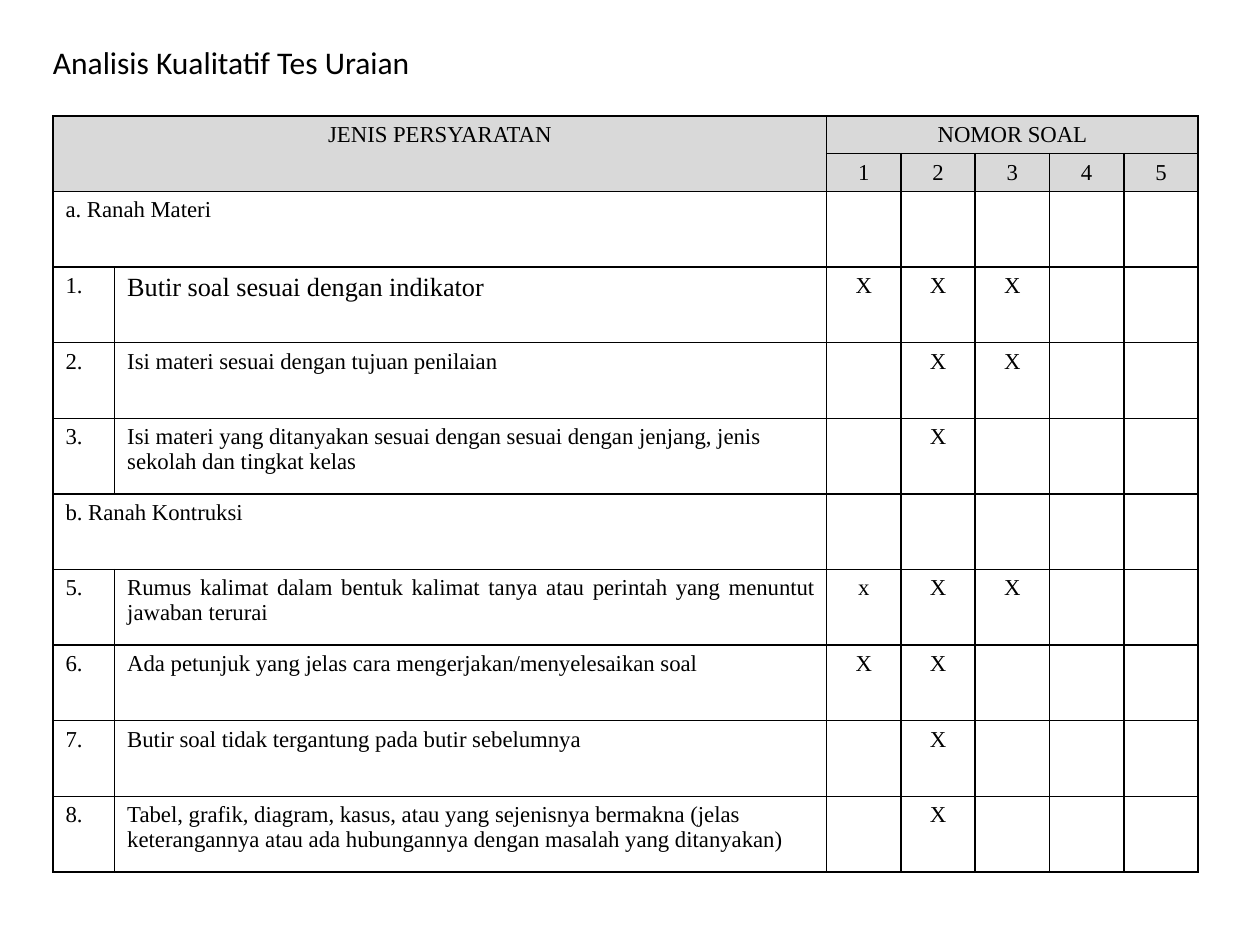
from lxml.etree import SubElement
from pptx import Presentation
from pptx.dml.color import RGBColor
from pptx.enum.text import MSO_ANCHOR, MSO_AUTO_SIZE, PP_ALIGN
from pptx.oxml.ns import qn
from pptx.util import Inches, Pt

COLORS = {"text": "000000", "border": "000000", "header": "D9D9D9"}
TITLE_FORMAT = {"name": "Calibri", "size": Pt(18), "bold": False}
CELL_FORMAT = {"name": "Times New Roman", "size": Pt(13), "bold": False}
LARGE_FORMAT = {**CELL_FORMAT, "size": Pt(15)}
CELL_MARGINS = {"margin_left": Inches(0.1), "margin_right": Inches(0.1),
                "margin_top": Inches(0.05), "margin_bottom": Inches(0.02)}

QUESTIONS = ["1", "2", "3", "4", "5"]
COLUMN_WIDTHS = [0.49, 5.65] + [0.59] * len(QUESTIONS)
HEADER_ROWS = 2
HEADER_HEIGHT, BODY_HEIGHT = 0.3, 0.6
LEFT, JUSTIFY, CENTER = PP_ALIGN.LEFT, PP_ALIGN.JUSTIFY, PP_ALIGN.CENTER

# Number (None for a section row), requirement, alignment, marks per question
REQUIREMENTS = [
    (None, "a. Ranah Materi", JUSTIFY, []),
    ("1.", "Butir soal sesuai dengan indikator", JUSTIFY, ["X", "X", "X"]),
    ("2.", "Isi materi sesuai dengan tujuan penilaian", LEFT, ["", "X", "X"]),
    ("3.", "Isi materi yang ditanyakan sesuai dengan sesuai dengan jenjang, "
           "jenis sekolah dan tingkat kelas", LEFT, ["", "X"]),
    (None, "b. Ranah Kontruksi", JUSTIFY, []),
    ("5.", "Rumus kalimat dalam bentuk kalimat tanya atau perintah yang "
           "menuntut jawaban terurai", JUSTIFY, ["x", "X", "X"]),
    ("6.", "Ada petunjuk yang jelas cara mengerjakan/menyelesaikan soal",
     JUSTIFY, ["X", "X"]),
    ("7.", "Butir soal tidak tergantung pada butir sebelumnya", JUSTIFY, ["", "X"]),
    ("8.", "Tabel, grafik, diagram, kasus, atau yang sejenisnya bermakna (jelas "
           "keterangannya atau ada hubungannya dengan masalah yang ditanyakan)",
     LEFT, ["", "X"]),
]


def apply_format(target, values):
    for name, value in values.items():
        setattr(target, name, value)


def write_text(paragraph, text, alignment, font_format):
    paragraph.alignment = alignment
    run = paragraph.add_run()
    run.text = text
    apply_format(run.font, font_format)
    run.font.color.rgb = RGBColor.from_string(COLORS["text"])


def write_cell(cell, text, alignment=CENTER, font_format=CELL_FORMAT):
    if text:
        write_text(cell.text_frame.paragraphs[0], text, alignment, font_format)


def draw_borders(cell):
    properties = cell._tc.get_or_add_tcPr()
    for side in ("a:lnL", "a:lnR", "a:lnT", "a:lnB"):
        line = SubElement(properties, qn(side), w=str(Pt(1)))
        fill = SubElement(line, qn("a:solidFill"))
        SubElement(fill, qn("a:srgbClr"), val=COLORS["border"])


def style_cell(cell, is_header):
    apply_format(cell, CELL_MARGINS)
    draw_borders(cell)
    if is_header:
        cell.fill.solid()
        cell.fill.fore_color.rgb = RGBColor.from_string(COLORS["header"])
    else:
        cell.fill.background()


def add_title(slide, left, top, width, height):
    title = slide.shapes.title
    apply_format(title, {"left": left, "top": top, "width": width, "height": height})
    apply_format(title.text_frame, {"word_wrap": False,
                                    "auto_size": MSO_AUTO_SIZE.SHAPE_TO_FIT_TEXT,
                                    "vertical_anchor": MSO_ANCHOR.TOP})
    write_text(title.text_frame.paragraphs[0], "Analisis Kualitatif Tes Uraian",
               LEFT, TITLE_FORMAT)


def fill_header(table):
    table.cell(0, 0).merge(table.cell(1, 1))
    table.cell(0, 2).merge(table.cell(0, len(COLUMN_WIDTHS) - 1))
    write_cell(table.cell(0, 0), "JENIS PERSYARATAN")
    write_cell(table.cell(0, 2), "NOMOR SOAL")
    for column, question in enumerate(QUESTIONS, start=2):
        write_cell(table.cell(1, column), question)


def fill_requirements(table):
    for row, (number, text, alignment, marks) in enumerate(REQUIREMENTS, HEADER_ROWS):
        if number is None:
            table.cell(row, 0).merge(table.cell(row, 1))
            write_cell(table.cell(row, 0), text, alignment)
        else:
            write_cell(table.cell(row, 0), number, JUSTIFY)
            font_format = LARGE_FORMAT if number == "1." else CELL_FORMAT
            write_cell(table.cell(row, 1), text, alignment, font_format)
        for column, mark in enumerate(marks, start=2):
            write_cell(table.cell(row, column), mark)


def add_checklist(slide, left, top):
    heights = [HEADER_HEIGHT] * HEADER_ROWS + [BODY_HEIGHT] * len(REQUIREMENTS)
    table = slide.shapes.add_table(len(heights), len(COLUMN_WIDTHS), left, top,
                                   Inches(sum(COLUMN_WIDTHS)),
                                   Inches(sum(heights))).table
    apply_format(table, {"first_row": False, "horz_banding": False})
    for column, width in zip(table.columns, COLUMN_WIDTHS):
        column.width = Inches(width)
    for index, (row, height) in enumerate(zip(table.rows, heights)):
        row.height = Inches(height)
        for cell in row.cells:
            style_cell(cell, index < HEADER_ROWS)
    fill_header(table)
    fill_requirements(table)


def main():
    presentation = Presentation()
    apply_format(presentation, {"slide_width": Inches(10), "slide_height": Inches(7.5)})
    slide = presentation.slides.add_slide(presentation.slide_layouts[5])
    add_title(slide, Inches(0.32), Inches(0.29), Inches(3.38), Inches(0.4))
    add_checklist(slide, Inches(0.42), Inches(0.92))
    presentation.save("out.pptx")


if __name__ == "__main__":
    main()
